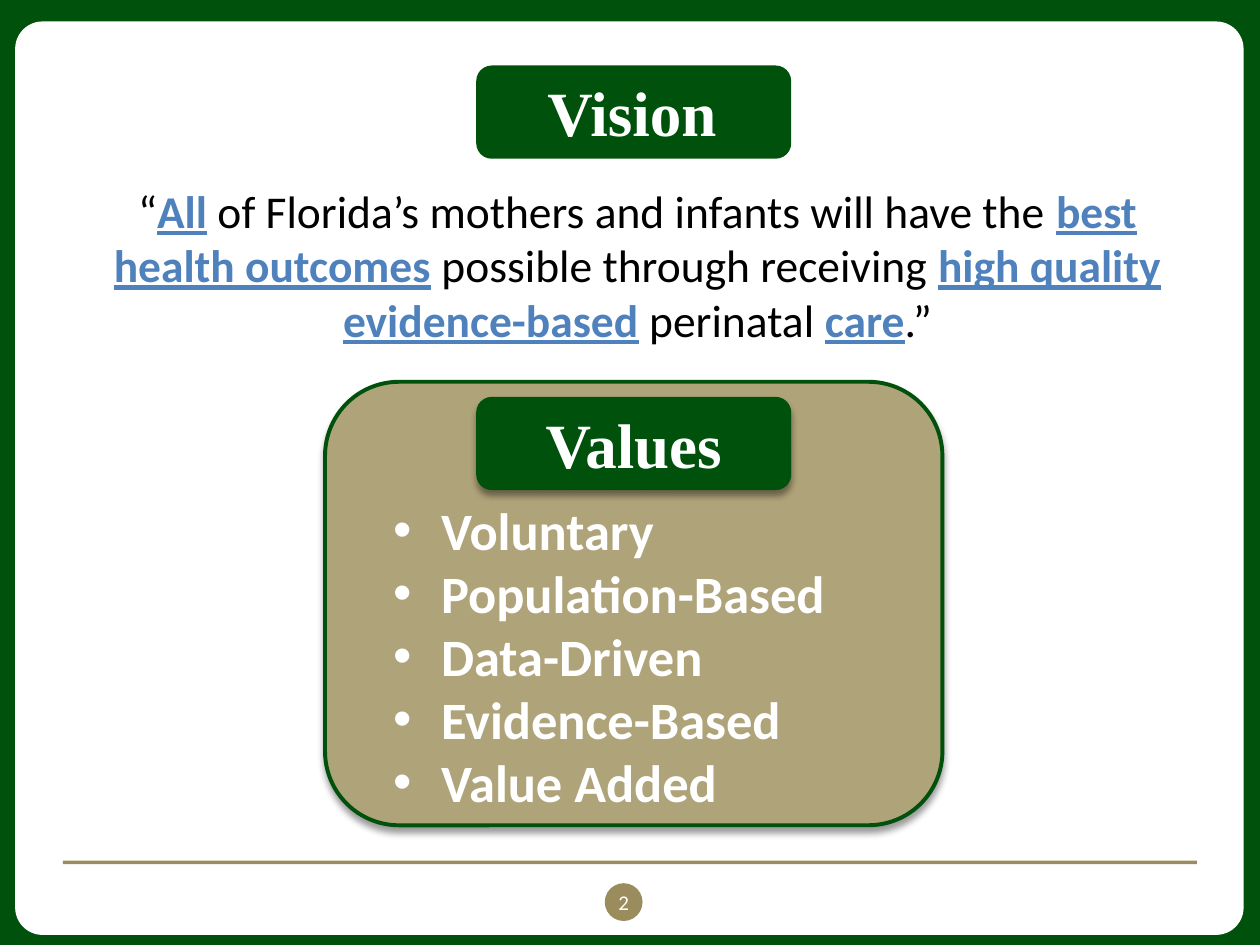
from dataclasses import dataclass
from pptx import Presentation
from pptx.dml.color import RGBColor
from pptx.enum.shapes import MSO_SHAPE
from pptx.enum.text import MSO_ANCHOR, MSO_AUTO_SIZE, PP_ALIGN
from pptx.oxml import parse_xml
from pptx.oxml.ns import nsdecls
from pptx.util import Inches, Pt

ROUND, OVAL, RECT = MSO_SHAPE.ROUNDED_RECTANGLE, MSO_SHAPE.OVAL, MSO_SHAPE.RECTANGLE
TOP, MIDDLE = MSO_ANCHOR.TOP, MSO_ANCHOR.MIDDLE
LEFT, CENTER = PP_ALIGN.LEFT, PP_ALIGN.CENTER
FIXED = MSO_AUTO_SIZE.NONE

COLS, ROWS = 100, 75
CELL = Inches(0.1)
GREEN, TAN, SAND, WHITE = "00510B", "9A8C5C", "AFA379", "FFFFFF"
BLUE, BLACK = "4F81BD", "000000"
SANS, SERIF = "Calibri", "Times New Roman"


@dataclass
class Box:
    col: float
    row: float
    wide: float
    high: float

    def place(self) -> tuple:
        return tuple(int(n * CELL) for n in (self.col, self.row, self.wide, self.high))


@dataclass
class Style:
    font: str
    size: int
    color: str = WHITE
    bold: bool = False
    under: bool = False


@dataclass
class Part:
    kind: int
    box: Box
    fill: str
    edge: str = ""
    shade: bool = False


def paint(code: str) -> RGBColor:
    return RGBColor.from_string(code)


def draw(slide, part: Part):
    shape = slide.shapes.add_shape(part.kind, *part.box.place())
    shape.shadow.inherit = False
    shape.fill.solid()
    shape.fill.fore_color.rgb = paint(part.fill)
    if part.edge:
        shape.line.color.rgb = paint(part.edge)
        shape.line.width = Pt(2.25)
    else:
        shape.line.fill.background()
    if part.shade:
        shape.shadow.inherit = True
        shape._element.spPr.append(parse_xml(
            f'<a:effectLst {nsdecls("a")}><a:outerShdw blurRad="{Pt(4)}" dist="{Pt(3)}" '
            'dir="5400000" rotWithShape="0"><a:srgbClr val="000000">'
            '<a:alpha val="40000"/></a:srgbClr></a:outerShdw></a:effectLst>'))
    return shape


def style(run, look: Style) -> None:
    font = run.font
    font.name, font.size = look.font, Pt(look.size)
    font.bold, font.underline = look.bold, look.under
    font.color.rgb = paint(look.color)


def setup(shape, box: Box, anchor):
    shape.left, shape.top, shape.width, shape.height = box.place()
    frame = shape.text_frame
    frame.word_wrap, frame.auto_size = True, FIXED
    frame.vertical_anchor = anchor
    return frame


def indent(para, inch: float, mark: str, align) -> None:
    props = para._p.get_or_add_pPr()
    props.set("marL", str(Inches(inch)))
    props.set("indent", str(-Inches(inch)))
    tag = f'buChar {nsdecls("a")} char="{mark}"' if mark else f'buNone {nsdecls("a")}'
    props.append(parse_xml(f"<a:{tag}/>"))
    para.alignment = align
    para.space_before = Pt(0)


def label(shape, box: Box, text: str, look: Style) -> None:
    frame = setup(shape, box, MIDDLE)
    frame.text = text
    para = frame.paragraphs[0]
    para.alignment = CENTER
    style(para.runs[0], look)


def quote(shape, box: Box, texts: list) -> None:
    para = setup(shape, box, TOP).paragraphs[0]
    indent(para, 0, "", CENTER)
    looks = Style(SANS, 26, BLACK), Style(SANS, 26, BLUE, True, True)
    for spot, text in enumerate(texts):
        run = para.add_run()
        run.text = text
        style(run, looks[spot % 2])


def bullets(shape, box: Box, items: list, look: Style) -> None:
    frame = setup(shape, box, TOP)
    frame.text = "\n".join(items)
    for para in frame.paragraphs:
        indent(para, 0.38, "•", LEFT)
        style(para.runs[0], look)


def main() -> None:
    deck = Presentation()
    deck.slide_width, deck.slide_height = COLS * CELL, ROWS * CELL
    slide = deck.slides.add_slide(deck.slide_layouts[3])
    slide.background.fill.solid()
    slide.background.fill.fore_color.rgb = paint(GREEN)
    title, vision, values = list(slide.placeholders)[:3]

    dot = Box(48, 70.1, 3, 3)
    tag = Box(37.8, 31.5, 25, 7.4)
    head = Style(SERIF, 36, bold=True)

    page = draw(slide, Part(ROUND, Box(1.2, 1.7, 97.5, 72.5), WHITE))
    page.adjustments[0] = 0.03
    badge = draw(slide, Part(OVAL, dot, TAN))
    draw(slide, Part(RECT, Box(5, 68.3, 90, 0.3), TAN))
    draw(slide, Part(ROUND, Box(25.8, 30.3, 49, 35.2), SAND, GREEN, True))
    draw(slide, Part(ROUND, Box(37.8, 5.2, 25, 7.4), GREEN))
    plate = draw(slide, Part(ROUND, tag, GREEN, shade=True))

    for holder in (title, vision, values):
        slide.shapes._spTree.append(holder._element)

    label(title, Box(41.3, 5.1, 17.7, 7.5), "Vision", head)
    label(plate, tag, "Values", head)
    label(badge, dot, "2", Style(SANS, 12))
    edges = badge.text_frame
    edges.margin_left = edges.margin_right = edges.margin_top = edges.margin_bottom = 0

    quote(vision, Box(5.6, 14, 90, 12.8), [
        "“", "All", " of Florida’s mothers and infants will have the ",
        "best", " ", "health outcomes", " possible through receiving ",
        "high quality evidence-based", " perinatal ", "care", ".”"])
    bullets(values, Box(30.2, 39, 41, 25.5), [
        "Voluntary", "Population-Based", "Data-Driven",
        "Evidence-Based", "Value Added"], Style(SANS, 30, bold=True))

    deck.save("out.pptx")


if __name__ == "__main__":
    main()
